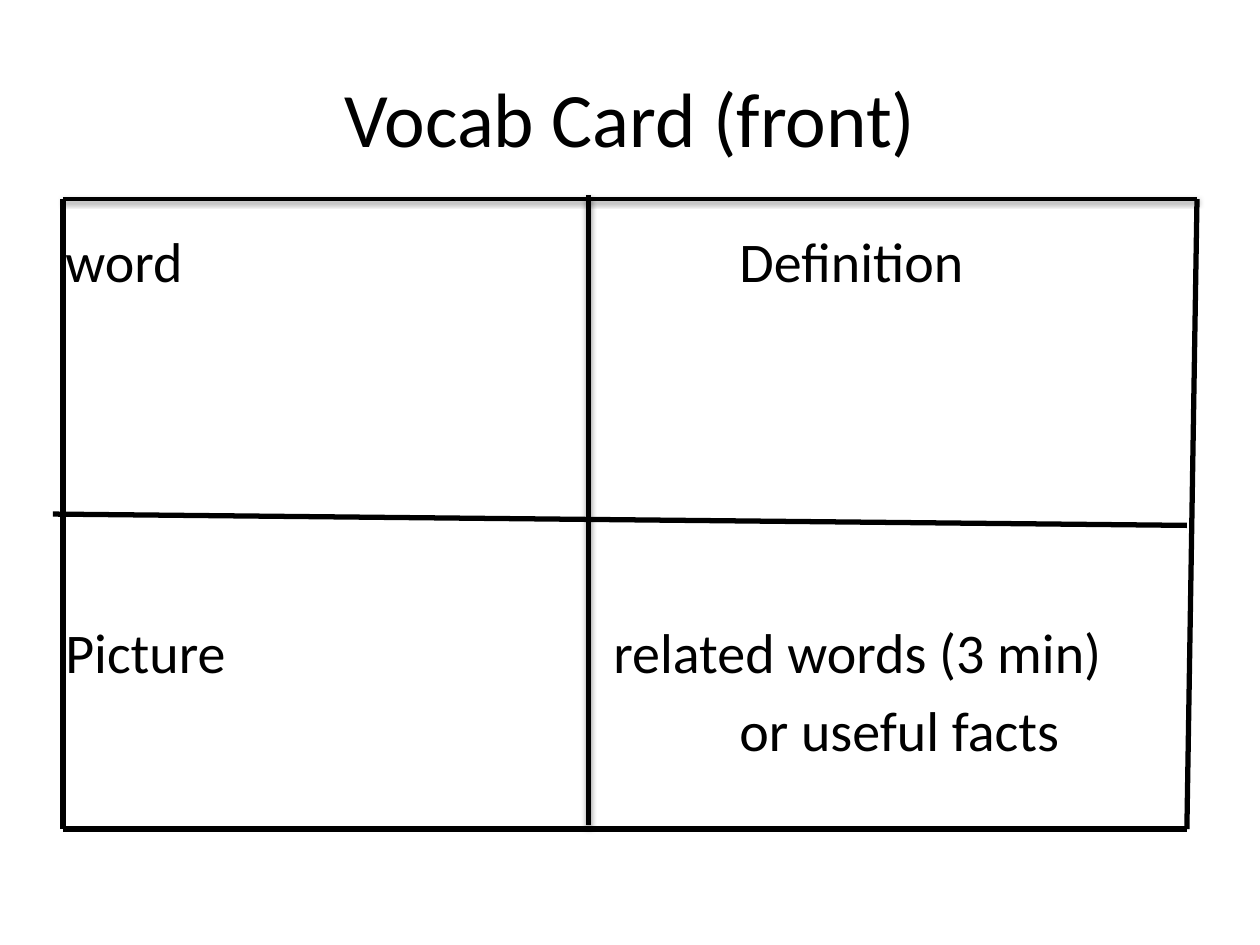
from pptx import Presentation
from pptx.dml.color import RGBColor
from pptx.enum.shapes import MSO_CONNECTOR as Connector
from pptx.enum.text import MSO_ANCHOR as Anchor, PP_ALIGN as Align
from pptx.oxml import parse_xml
from pptx.oxml.ns import nsdecls, qn
from pptx.util import Inches, Pt
from lxml.etree import SubElement

THEME = {
    "font": "Calibri",
    "ink": "000000",
    "title_size": 44,
    "label_size": 32,
    "shadow": {"blur": 3.1, "distance": 1.6, "opacity": 38},
}

TITLE = "Vocab Card (front)"
CARD_ROWS = [
    ("word\tDefinition", 0, 5.35),
    ("Picture\trelated words (3 min)", 185, 4.35),
    ("\tor useful facts", 6, 5.35),
]

LEFT, RIGHT, TOP, BOTTOM = 0.5, 9.5, 1.58, 6.58
MIDDLE, OVERHANG = 4.67, 0.08
INNER_RIGHT = RIGHT - OVERHANG
CARD_LINES = [
    ((MIDDLE, 1.55), (MIDDLE, 6.55), 3, True),
    ((LEFT, TOP), (RIGHT, TOP), 2, True),
    ((LEFT, TOP), (LEFT, BOTTOM), 3, False),
    ((LEFT, BOTTOM), (INNER_RIGHT, BOTTOM), 3, False),
    ((RIGHT, TOP), (INNER_RIGHT, BOTTOM), 3, False),
    ((LEFT - OVERHANG, 4.08), (INNER_RIGHT, 4.17), 3, False),
]


def add_frame(slide, left, top, width, height, anchor):
    box = slide.shapes.add_textbox(*map(Inches, (left, top, width, height)))
    frame = box.text_frame
    frame.word_wrap = True
    frame.vertical_anchor = anchor
    return frame


def add_run(paragraph, text, size):
    run = paragraph.add_run()
    run.text = text
    run.font.name = THEME["font"]
    run.font.size = Pt(size)
    run.font.color.rgb = RGBColor.from_string(THEME["ink"])


def add_tab_stop(paragraph, position):
    tabs = SubElement(paragraph._p.get_or_add_pPr(), qn("a:tabLst"))
    SubElement(tabs, qn("a:tab"), pos=str(Inches(position)), algn="l")


def add_card_rows(slide):
    frame = add_frame(slide, 0.42, 1.75, 9.08, 4.95, Anchor.TOP)
    for index, (text, gap, tab) in enumerate(CARD_ROWS):
        paragraph = frame.add_paragraph() if index else frame.paragraphs[0]
        paragraph.space_before = Pt(gap)
        add_tab_stop(paragraph, tab)
        add_run(paragraph, text, THEME["label_size"])


def add_card_line(slide, start, end, weight, shadowed):
    line = slide.shapes.add_connector(
        Connector.STRAIGHT, *map(Inches, start + end))
    line.line.color.rgb = RGBColor.from_string(THEME["ink"])
    line.line.width = Pt(weight)
    effects = parse_xml(f"<a:effectLst {nsdecls('a')}/>")
    if shadowed:
        shadow = THEME["shadow"]
        outer = SubElement(
            effects, qn("a:outerShdw"), blurRad=str(Pt(shadow["blur"])),
            dist=str(Pt(shadow["distance"])), dir="5400000", rotWithShape="0")
        color = SubElement(outer, qn("a:srgbClr"), val=THEME["ink"])
        SubElement(color, qn("a:alpha"), val=str(shadow["opacity"] * 1000))
    line._element.spPr.append(effects)


def main():
    deck = Presentation()
    deck.slide_width, deck.slide_height = Inches(10), Inches(7.5)
    slide = deck.slides.add_slide(deck.slide_layouts[6])

    title = add_frame(slide, 0.5, 0.3, 9, 1.25, Anchor.MIDDLE).paragraphs[0]
    title.alignment = Align.CENTER
    add_run(title, TITLE, THEME["title_size"])

    add_card_rows(slide)
    for card_line in CARD_LINES:
        add_card_line(slide, *card_line)
    deck.save("out.pptx")


if __name__ == "__main__":
    main()
